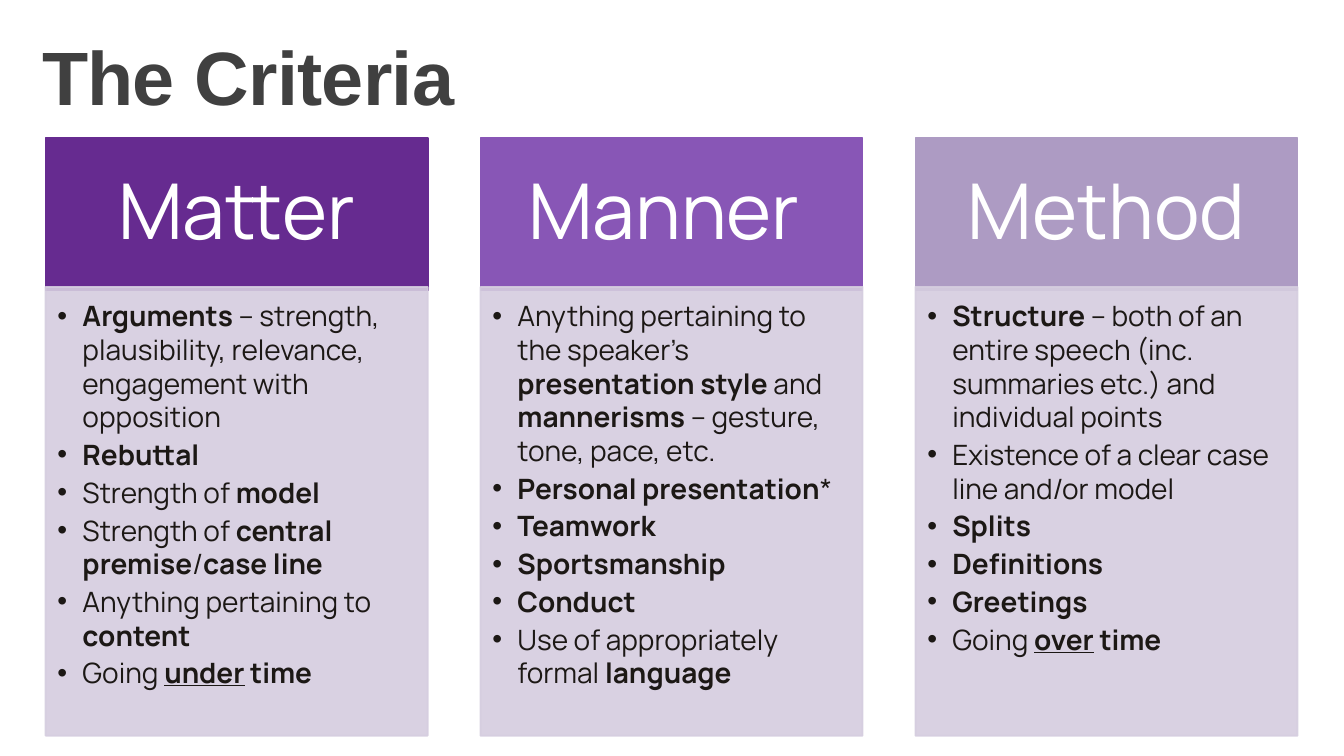
from lxml.etree import SubElement
from pptx import Presentation
from pptx.dml.color import RGBColor
from pptx.enum.shapes import MSO_SHAPE
from pptx.enum.text import MSO_ANCHOR, MSO_AUTO_SIZE, PP_ALIGN
from pptx.oxml.ns import qn
from pptx.util import Cm, Pt

COLORS = {
    "matter": "662B90", "manner": "8856B6", "method": "AD9BC3",
    "panel": "D5CDDF", "title": "404040", "body": "1C1815", "white": "FFFFFF",
}
HEADER_H, PANEL_TOP = Cm(3.84), Cm(3.75)

# Each bullet is a list of (text, style) runs: b = bold, u = underlined
COLUMNS = [
    ("Matter", "matter", [
        [("Arguments", "b"), (" – strength, plausibility, relevance, engagement with opposition", "")],
        [("Rebuttal", "b")],
        [("Strength of ", ""), ("model", "b")],
        [("Strength of ", ""), ("central premise", "b"), ("/", ""), ("case line", "b")],
        [("Anything pertaining to ", ""), ("content", "b")],
        [("Going ", ""), ("under", "bu"), (" ", ""), ("time", "b")],
    ]),
    ("Manner ", "manner", [
        [("Anything pertaining to the speaker’s ", ""), ("presentation style", "b"), (" and ", ""),
         ("mannerisms", "b"), (" – gesture, tone, pace, etc.", "")],
        [("Personal presentation", "b"), ("*", "")],
        [("Teamwork", "b")],
        [("Sportsmanship", "b")],
        [("Conduct", "b")],
        [("Use of appropriately formal ", ""), ("language", "b")],
    ]),
    ("Method", "method", [
        [("Structure", "b"), (" – both of an entire speech (inc. summaries etc.) and individual points", "")],
        [("Existence of a clear case line and/or model", "")],
        [("Splits", "b")],
        [("Definitions", "b")],
        [("Greetings", "b")],
        [("Going ", ""), ("over", "bu"), (" ", ""), ("time", "b")],
    ]),
]


def rgb(name):
    return RGBColor.from_string(COLORS[name])


def add_run(p, text, font, size, color, style=""):
    r = p.add_run()
    r.text = text
    r.font.name, r.font.size = font, Pt(size)
    r.font.color.rgb = rgb(color)
    r.font.bold = "b" in style
    r.font.underline = "u" in style
    return r


def set_frame(tf, anchor, left, top, right, bottom):
    tf.word_wrap = True
    tf.auto_size = MSO_AUTO_SIZE.NONE
    tf.vertical_anchor = anchor
    tf.margin_left, tf.margin_top = Cm(left), Cm(top)
    tf.margin_right, tf.margin_bottom = Cm(right), Cm(bottom)


def add_box(s, x, y, w, h, color):
    sp = s.shapes.add_shape(MSO_SHAPE.RECTANGLE, x, y, w, h)
    sp.shadow.inherit = False
    sp.fill.solid()
    sp.fill.fore_color.rgb = rgb(color)
    sp.line.color.rgb = rgb(color)
    sp.line.width = Pt(1.25)
    return sp


def add_title(s, x, y, w, h):
    sp = s.shapes.title
    sp.left, sp.top, sp.width, sp.height = x, y, w, h
    set_frame(sp.text_frame, MSO_ANCHOR.TOP, 0.25, 0.25, 0.25, 0.25)
    p = sp.text_frame.paragraphs[0]
    p.alignment, p.line_spacing = PP_ALIGN.LEFT, 0.9
    r = add_run(p, "The Criteria", "Arial", 54, "title", "b")
    r.font._element.set("spc", "-50")


def add_column(s, x, y, w, h, heading, color, bullets):
    # Heading block
    sp = add_box(s, x, y, w, HEADER_H, color)
    set_frame(sp.text_frame, MSO_ANCHOR.MIDDLE, 1.09, 0.61, 1.09, 0.61)
    p = sp.text_frame.paragraphs[0]
    p.alignment, p.line_spacing = PP_ALIGN.CENTER, 0.9
    add_run(p, heading, "Manrope", 55, "white")

    # Translucent panel with the list
    sp = add_box(s, x, y + PANEL_TOP, w, h - PANEL_TOP, "panel")
    for clr in sp._element.spPr.iter(qn("a:srgbClr")):
        SubElement(clr, qn("a:alpha"), val="90000")
    tf = sp.text_frame
    set_frame(tf, MSO_ANCHOR.TOP, 0.3, 0.3, 0.41, 0.43)
    for i, runs in enumerate(bullets):
        p = tf.add_paragraph() if i else tf.paragraphs[0]
        pPr = p._p.get_or_add_pPr()
        pPr.set("marL", str(Cm(0.63)))
        pPr.set("indent", str(-Cm(0.63)))
        SubElement(pPr, qn("a:buFont"), typeface="Arial")
        SubElement(pPr, qn("a:buChar"), char="•")
        p.alignment, p.line_spacing, p.space_after = PP_ALIGN.LEFT, 1.0, Pt(3)
        for text, style in runs:
            add_run(p, text, "Manrope", 20, "body", style)


def main():
    prs = Presentation()
    prs.slide_width, prs.slide_height = Cm(33.87), Cm(19.05)
    s = prs.slides.add_slide(prs.slide_layouts[5])
    add_title(s, Cm(0.81), Cm(0.76), Cm(29.16), Cm(4.65))
    for i, column in enumerate(COLUMNS):
        add_column(s, Cm(1.15 + 10.96 * i), Cm(3.48), Cm(9.63), Cm(15.06), *column)
    prs.save("out.pptx")


if __name__ == "__main__":
    main()
